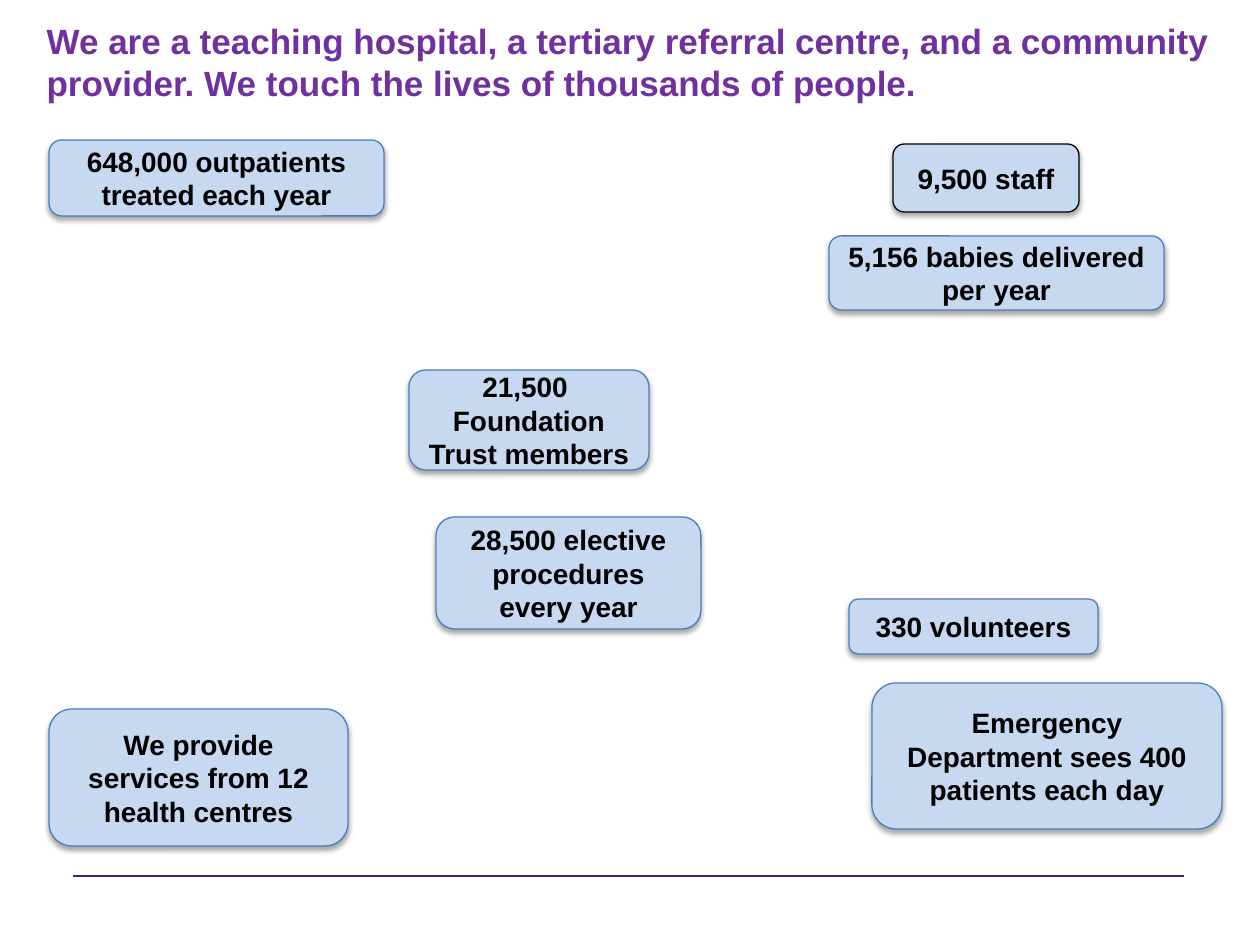
from lxml import etree
from pptx import Presentation
from pptx.dml.color import RGBColor
from pptx.enum.shapes import MSO_CONNECTOR, MSO_SHAPE
from pptx.enum.text import MSO_ANCHOR, MSO_AUTO_SIZE, PP_ALIGN
from pptx.oxml import parse_xml
from pptx.oxml.ns import qn
from pptx.util import Emu, Pt

ROUND = MSO_SHAPE.ROUNDED_RECTANGLE
STRAIGHT = MSO_CONNECTOR.STRAIGHT
TOP, MIDDLE = MSO_ANCHOR.TOP, MSO_ANCHOR.MIDDLE
LEFT, CENTER = PP_ALIGN.LEFT, PP_ALIGN.CENTER
FIXED = MSO_AUTO_SIZE.NONE
SCALE = 914400 / 126
COLORS = {
    "title": "7030A0",
    "text": "000000",
    "fill": "C6D9F1",
    "edge": "4B7EBC",
    "staff": "000000",
    "rule": "3E1F81",
}
SHADOW = (
    '<a:outerShdw xmlns:a="http://schemas.openxmlformats.org/drawingml/2006/main"'
    ' blurRad="39370" dist="22860" dir="5400000" rotWithShape="0">'
    '<a:srgbClr val="000000"><a:alpha val="35000"/></a:srgbClr></a:outerShdw>'
)
FACTS = [
    ((893, 144, 186, 68), ["9,500 staff"], "staff"),
    ((409, 370, 240, 100), ["21,500 ", "Foundation Trust members"], "edge"),
    ((849, 599, 249, 55), ["330 volunteers"], "edge"),
    ((49, 140, 335, 76), ["648,000 outpatients treated each year"], "edge"),
    ((829, 236, 335, 74), ["5,156 babies delivered per year"], "edge"),
    ((49, 709, 299, 137), ["We provide services from 12 health centres"], "edge"),
    ((872, 683, 350, 146), ["Emergency Department sees 400 patients each day"], "edge"),
    ((436, 517, 265, 112), ["28,500 elective procedures every year"], "edge"),
]


def px(num):
    return Emu(round(num * SCALE))


def tint(name):
    return RGBColor.from_string(COLORS[name])


class Board:
    def __init__(self, slide):
        self.slide = slide
        self.font = {"name": "Arial", "bold": True}

    def label(self, shape, lines, size, color, align, anchor):
        frame = shape.text_frame
        form = {"word_wrap": True, "auto_size": FIXED, "vertical_anchor": anchor}
        for key, val in form.items():
            setattr(frame, key, val)
        frame.text = "\n".join(lines)
        for para in frame.paragraphs:
            para.alignment = align
            for run in para.runs:
                for key, val in {**self.font, "size": Pt(size)}.items():
                    setattr(run.font, key, val)
                run.font.color.rgb = tint(color)

    def title(self, box, text):
        shape = self.slide.shapes.title
        for key, val in zip(("left", "top", "width", "height"), box):
            setattr(shape, key, px(val))
        self.label(shape, [text], 20, "title", LEFT, TOP)

    def card(self, box, lines, edge):
        shape = self.slide.shapes.add_shape(ROUND, *map(px, box))
        shape.fill.solid()
        shape.fill.fore_color.rgb = tint("fill")
        shape.line.color.rgb = tint(edge)
        shape.line.width = Pt(0.75)
        shape.shadow.inherit = False
        effect = shape._element.spPr.find(qn("a:effectLst"))
        effect.append(parse_xml(SHADOW))
        self.label(shape, lines, 16, "text", CENTER, MIDDLE)

    def rule(self, ends):
        line = self.slide.shapes.add_connector(STRAIGHT, *map(px, ends))
        line.line.color.rgb = tint("rule")
        line.line.width = Pt(0.75)
        etree.SubElement(line._element.spPr, qn("a:effectLst"))


def main():
    deck = Presentation()
    deck.slide_width, deck.slide_height = px(1260), px(945)
    board = Board(deck.slides.add_slide(deck.slide_layouts[5]))
    board.rule((73, 876, 1184, 876))
    for box, lines, edge in FACTS:
        board.card(box, lines, edge)
    board.title(
        (34, 13, 1198, 97),
        "We are a teaching hospital, a tertiary referral centre, and a community "
        "provider. We touch the lives of thousands of people.",
    )
    deck.save("out.pptx")


if __name__ == "__main__":
    main()
